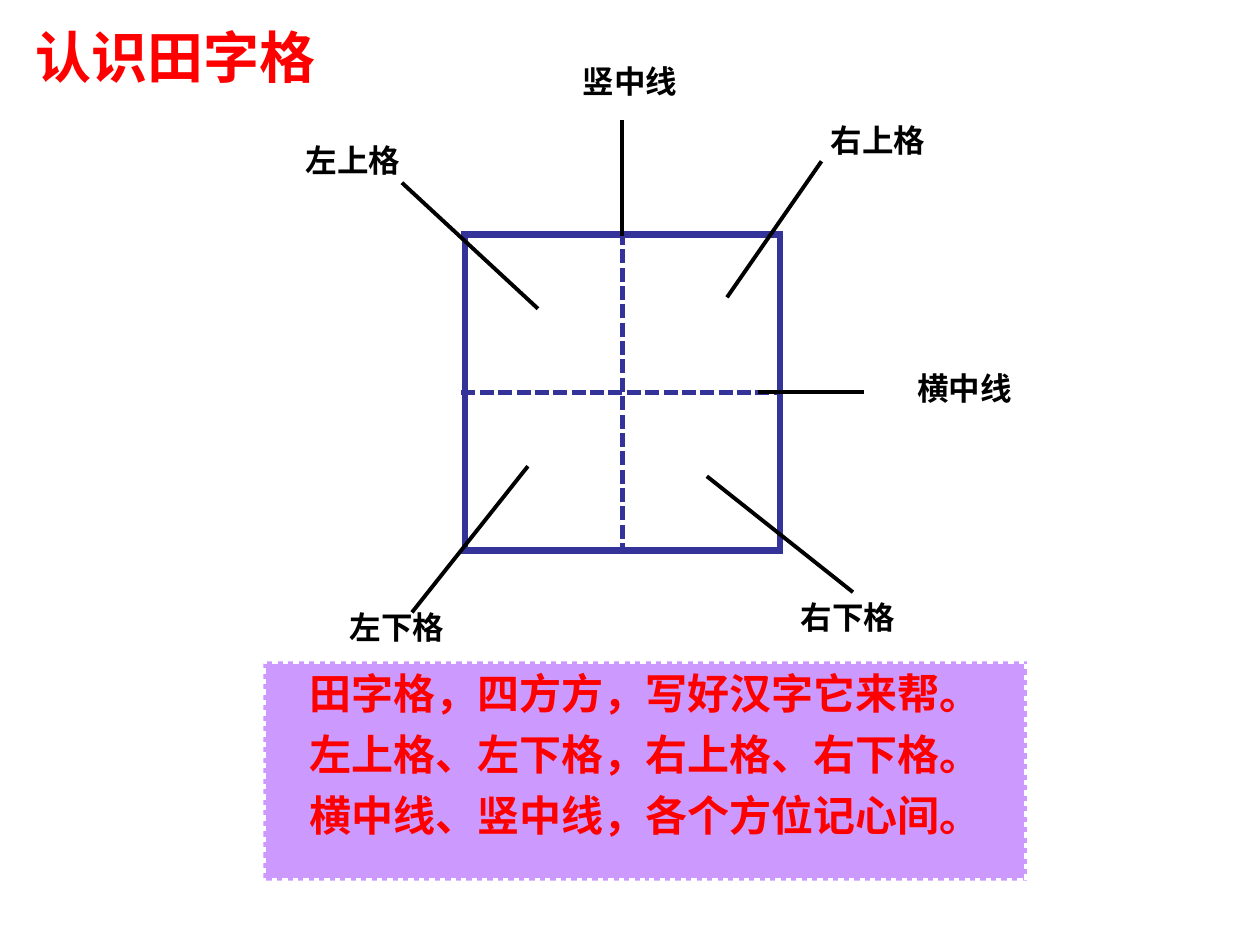
from lxml import etree
from pptx import Presentation
from pptx.dml.color import RGBColor
from pptx.enum.dml import MSO_LINE
from pptx.enum.shapes import MSO_CONNECTOR, MSO_SHAPE
from pptx.enum.text import MSO_ANCHOR, PP_ALIGN
from pptx.oxml.ns import qn
from pptx.util import Inches, Pt

BLACK = RGBColor(0x00, 0x00, 0x00)
WHITE = RGBColor(0xFF, 0xFF, 0xFF)
RED = RGBColor(0xFF, 0x00, 0x00)
NAVY = RGBColor(0x33, 0x33, 0x99)
LILAC = RGBColor(0xCC, 0x99, 0xFF)

CALLOUTS = [
    ("竖中线", (4.21, 0.44, 1.58, 0.57), (4.94, 1.87), (4.94, 0.95)),
    ("左下格", (2.36, 4.78, 1.58, 0.57), (3.27, 4.86), (4.19, 3.7)),
    ("右下格", (5.94, 4.7, 1.58, 0.57), (5.61, 3.78), (6.77, 4.7)),
    ("左上格", (2.01, 1.07, 1.58, 0.57), (3.19, 1.45), (4.27, 2.45)),
    ("右上格", (6.26, 0.91, 1.42, 0.57), (5.77, 2.36), (6.52, 1.28)),
    ("横中线", (7.05, 2.88, 1.21, 0.4), (6.02, 3.11), (6.86, 3.11)),
]
RHYME = [
    "田字格，四方方，写好汉字它来帮。",
    "左上格、左下格，右上格、右下格。",
    "横中线、竖中线，各个方位记心间。",
]


def inches(values):
    return [Inches(value) for value in values]


def write_lines(text_frame, lines, size, color, alignment=PP_ALIGN.CENTER):
    text_frame.word_wrap = True
    for index, line in enumerate(lines):
        paragraph = text_frame.add_paragraph() if index else text_frame.paragraphs[0]
        paragraph.alignment = alignment
        if index:
            paragraph.space_before = Pt(6)
        run = paragraph.add_run()
        run.text = line
        run.font.name = "Arial"
        run.font.size = Pt(size)
        run.font.bold = True
        run.font.color.rgb = color


def add_title(slide, box, text):
    text_frame = slide.shapes.add_textbox(*inches(box)).text_frame
    text_frame.margin_left = Inches(0.28)
    write_lines(text_frame, [text], 32, RED, PP_ALIGN.LEFT)


def set_border(cell, side, width, dash):
    properties = cell._tc.get_or_add_tcPr()
    line = etree.SubElement(properties, qn(f"a:ln{side}"), w=str(Pt(width)))
    fill = etree.SubElement(line, qn("a:solidFill"))
    etree.SubElement(fill, qn("a:srgbClr"), val=str(NAVY))
    etree.SubElement(line, qn("a:prstDash"), val=dash)


def add_character_grid(slide, box):
    table = slide.shapes.add_table(2, 2, *inches(box)).table
    table.first_row = False
    table.horz_banding = False
    for row in range(2):
        for column in range(2):
            cell = table.cell(row, column)
            outer_sides = ("LR"[column], "TB"[row])
            for side in "LRTB":
                if side in outer_sides:
                    set_border(cell, side, 4.5, "solid")
                else:
                    set_border(cell, side, 3, "sysDash")
            cell.fill.background()


def add_callout(slide, text, box, start, end):
    connector = slide.shapes.add_connector(MSO_CONNECTOR.STRAIGHT, *inches(start + end))
    connector.line.color.rgb = BLACK
    connector.line.width = Pt(2.25)
    etree.SubElement(connector._element.spPr, qn("a:effectLst"))
    label = slide.shapes.add_textbox(*inches(box))
    write_lines(label.text_frame, [text], 18, BLACK)


def add_rhyme_panel(slide, box, lines):
    shape = slide.shapes.add_shape(MSO_SHAPE.RECTANGLE, *inches(box))
    shape.shadow.inherit = False
    shape.fill.solid()
    shape.fill.fore_color.rgb = LILAC
    shape.line.color.rgb = WHITE
    shape.line.width = Pt(3)
    shape.line.dash_style = MSO_LINE.ROUND_DOT
    shape.text_frame.vertical_anchor = MSO_ANCHOR.TOP
    write_lines(shape.text_frame, lines, 24, RED)


def main():
    presentation = Presentation()
    presentation.slide_width = Inches(10)
    presentation.slide_height = Inches(7.5)
    slide = presentation.slides.add_slide(presentation.slide_layouts[6])
    add_character_grid(slide, (3.69, 1.86, 2.5, 2.51))
    for callout in CALLOUTS:
        add_callout(slide, *callout)
    add_title(slide, (0, 0.13, 2.99, 0.63), "认识田字格")
    add_rhyme_panel(slide, (2.09, 5.25, 6.06, 1.74), RHYME)
    presentation.save("out.pptx")


if __name__ == "__main__":
    main()
